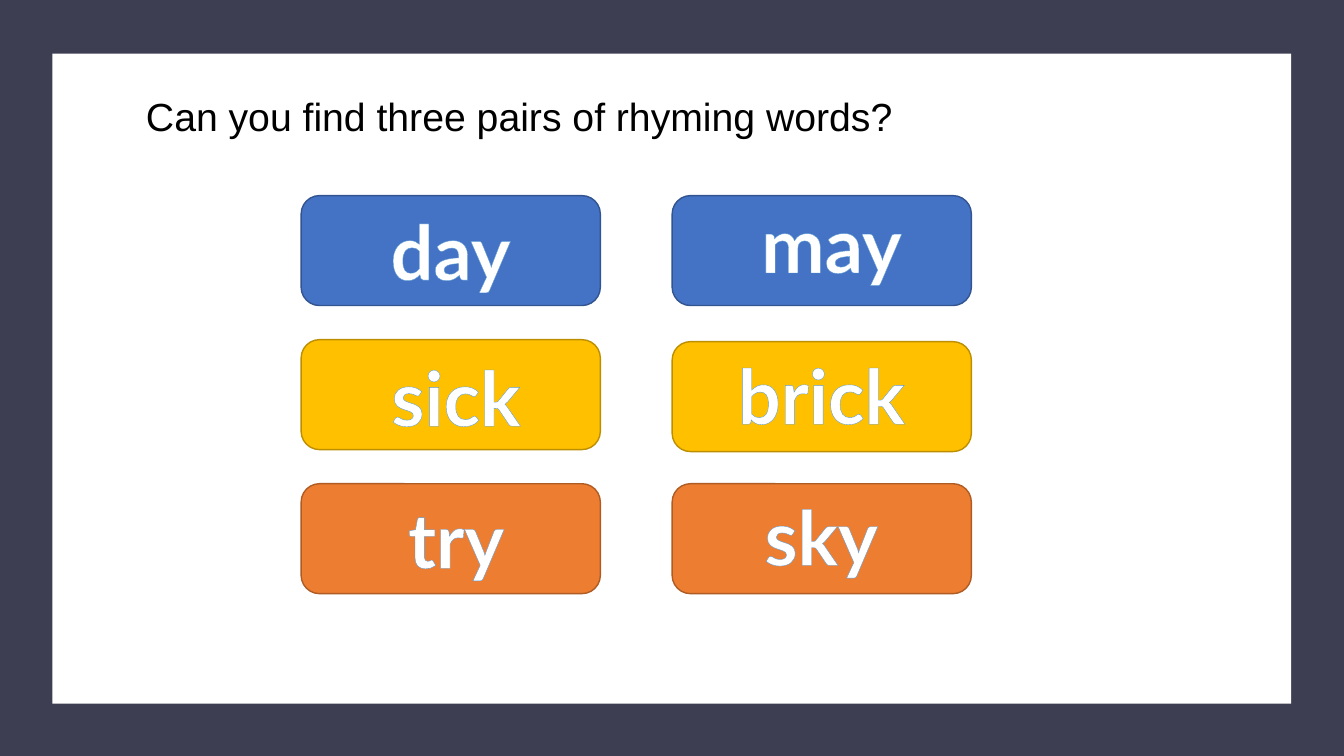
"""Build a slide of six coloured word cards that form three rhyming pairs."""
from dataclasses import dataclass

import lxml.etree
import pptx
import pptx.dml.color
import pptx.enum.shapes
import pptx.enum.text
import pptx.oxml.ns
import pptx.util

Cm = pptx.util.Cm
ShapeKind = pptx.enum.shapes.MSO_SHAPE

SLIDE_WIDTH, SLIDE_HEIGHT = 33.87, 19.05
CARD_LEFT, CARD_TOP = 7.59, 4.93
CARD_WIDTH, CARD_HEIGHT = 7.54, 2.77
COLUMN_STEP, ROW_STEP = 9.35, 3.63
WORD_HEIGHT = 2.57


@dataclass(frozen=True)
class Box:
    left: float
    top: float
    width: float
    height: float

    def lengths(self) -> tuple:
        return Cm(self.left), Cm(self.top), Cm(self.width), Cm(self.height)


@dataclass(frozen=True)
class Word:
    text: str
    left: float
    top: float
    width: float
    card_drop: float = 0


@dataclass(frozen=True)
class RhymingPair:
    fill: str
    line: str
    words: tuple[Word, Word]


RHYMING_PAIRS = (
    RhymingPair("4472C4", "325491", (
        Word("day", 9.27, 5.03, 4.17), Word("may", 18.49, 4.85, 4.93))),
    RhymingPair("FFC000", "BD8E00", (
        Word("sick", 9.19, 8.71, 4.6), Word("brick", 17.83, 8.66, 5.74, 0.05))),
    RhymingPair("ED7D31", "AF5C24", (
        Word("try", 9.73, 12.29, 3.53), Word("sky", 18.69, 12.22, 4.01))),
)


def color(value: str) -> pptx.dml.color.RGBColor:
    return pptx.dml.color.RGBColor.from_string(value)


def add_block(slide, kind, box: Box, fill: str, line: str | None = None) -> None:
    shape = slide.shapes.add_shape(kind, *box.lengths())
    shape.shadow.inherit = False
    shape.fill.solid()
    shape.fill.fore_color.rgb = color(fill)
    if line is None:
        shape.line.fill.background()
    else:
        shape.line.color.rgb = color(line)
        shape.line.width = pptx.util.Pt(1)


def add_text(slide, box: Box, text: str, font: str, size: float, ink: str, wrap: bool):
    text_box = slide.shapes.add_textbox(*box.lengths())
    frame = text_box.text_frame
    frame.word_wrap = wrap
    frame.auto_size = pptx.enum.text.MSO_AUTO_SIZE.SHAPE_TO_FIT_TEXT
    run = frame.paragraphs[0].add_run()
    run.text = text
    run.font.name = font
    run.font.size = pptx.util.Pt(size)
    run.font.color.rgb = color(ink)
    return frame.paragraphs[0]


def outline_run(run, ink: str, width: float) -> None:
    qualified = pptx.oxml.ns.qn
    line = lxml.etree.Element(qualified("a:ln"), w=str(int(pptx.util.Pt(width))))
    fill = lxml.etree.SubElement(line, qualified("a:solidFill"))
    lxml.etree.SubElement(fill, qualified("a:srgbClr"), val=ink)
    run.font._element.insert(0, line)


def add_word(slide, word: Word) -> None:
    box = Box(word.left, word.top, word.width, WORD_HEIGHT)
    paragraph = add_text(slide, box, word.text, "Lato", 54, "FFFFFF", wrap=False)
    paragraph.alignment = pptx.enum.text.PP_ALIGN.CENTER
    run = paragraph.runs[0]
    run.font.bold = True
    outline_run(run, "5B9BD5", 0.8)


def add_pair(slide, row: int, pair: RhymingPair) -> None:
    for column, word in enumerate(pair.words):
        card = Box(
            CARD_LEFT + column * COLUMN_STEP,
            CARD_TOP + row * ROW_STEP + word.card_drop,
            CARD_WIDTH,
            CARD_HEIGHT,
        )
        add_block(slide, ShapeKind.ROUNDED_RECTANGLE, card, pair.fill, pair.line)
        add_word(slide, word)


def main() -> None:
    presentation = pptx.Presentation()
    presentation.slide_width = Cm(SLIDE_WIDTH)
    presentation.slide_height = Cm(SLIDE_HEIGHT)
    slide = presentation.slides.add_slide(presentation.slide_layouts[6])

    add_block(slide, ShapeKind.RECTANGLE, Box(0, 0, SLIDE_WIDTH, SLIDE_HEIGHT), "3D3E52")
    add_block(slide, ShapeKind.RECTANGLE, Box(1.32, 1.35, 31.22, 16.38), "FFFFFF")
    add_text(slide, Box(3.43, 2.21, 26.01, 1.45),
             "Can you find three pairs of rhyming words?", "Arial", 28, "000000", wrap=True)
    for row, pair in enumerate(RHYMING_PAIRS):
        add_pair(slide, row, pair)

    presentation.save("out.pptx")


if __name__ == "__main__":
    main()
